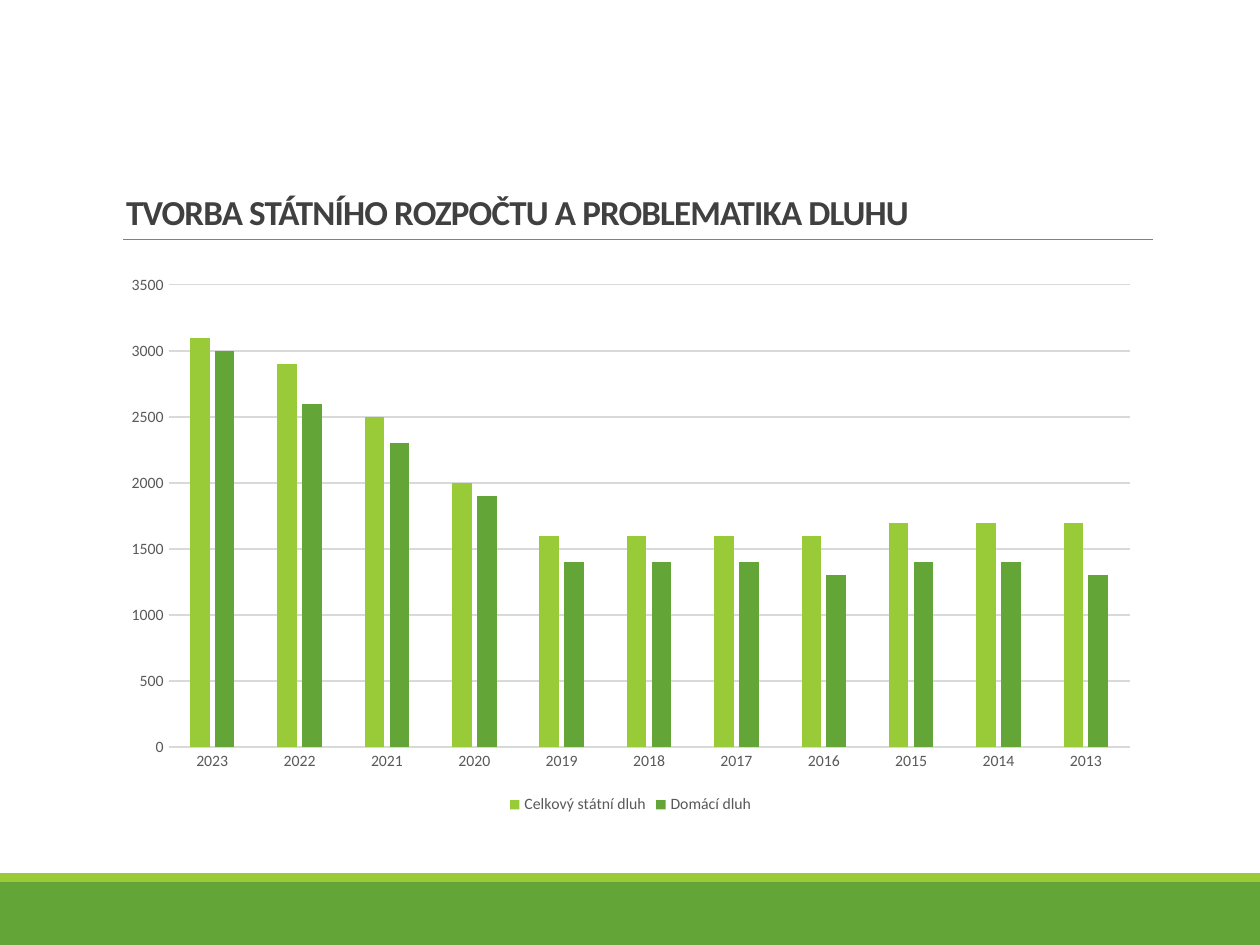
from pptx import Presentation
from pptx.chart.data import CategoryChartData
from pptx.dml.color import RGBColor
from pptx.enum.chart import XL_CHART_TYPE as ChartType, XL_LEGEND_POSITION as LegendPos, XL_TICK_MARK as Tick
from pptx.enum.shapes import MSO_CONNECTOR as Connector, MSO_SHAPE as Shape
from pptx.enum.text import MSO_ANCHOR as Anchor, PP_ALIGN as Align
from pptx.oxml.ns import qn
from pptx.util import Inches, Pt
from lxml import etree

COLORS = {
    "total": "99CB38",
    "domestic": "63A537",
    "heading": "404040",
    "rule": "808080",
    "label": "595959",
    "grid": "D9D9D9",
}
YEARS = [str(year) for year in range(2023, 2012, -1)]
DEBT = {
    "total": ("Celkový státní dluh",
              [3100, 2900, 2500, 2000, 1600, 1600, 1600, 1600, 1700, 1700, 1700]),
    "domestic": ("Domácí dluh",
                 [3000, 2600, 2300, 1900, 1400, 1400, 1400, 1300, 1400, 1400, 1300]),
}
LABEL_FONT = {"name": "Calibri", "size": Pt(9), "bold": False}
HEADING_FONT = {"name": "Calibri", "size": Pt(20), "bold": True}


def color(key):
    return RGBColor.from_string(COLORS[key])


def apply(target, values):
    for name, value in values.items():
        setattr(target, name, value)


def style_font(font, values, key):
    apply(font, values)
    font.color.rgb = color(key)


def style_line(line, key, width):
    line.color.rgb = color(key)
    line.width = Pt(width)


def add_footer(slide, left, top, width, height):
    stripe = Inches(0.07)
    bands = [("domestic", top + stripe, height - stripe), ("total", top, stripe)]
    for key, band_top, band_height in bands:
        band = slide.shapes.add_shape(Shape.RECTANGLE, left, band_top, width, band_height)
        band.shadow.inherit = False
        band.fill.solid()
        band.fill.fore_color.rgb = color(key)
        band.line.fill.background()


def add_heading(slide, left, top, width, height):
    heading = slide.shapes.title
    apply(heading, {"left": left, "top": top, "width": width, "height": height})
    apply(heading.text_frame, {"vertical_anchor": Anchor.BOTTOM, "word_wrap": True})
    paragraph = heading.text_frame.paragraphs[0]
    apply(paragraph, {"alignment": Align.LEFT, "line_spacing": 0.85})
    run = paragraph.add_run()
    run.text = "TVORBA STÁTNÍHO ROZPOČTU A PROBLEMATIKA DLUHU"
    style_font(run.font, HEADING_FONT, "heading")
    run.font._element.set("spc", "-50")

    bottom = top + height
    rule = slide.shapes.add_connector(
        Connector.STRAIGHT, left + Inches(0.08), bottom, left + width, bottom)
    style_line(rule.line, "rule", 0.5)
    etree.SubElement(rule._element.spPr, qn("a:effectLst"))


def add_debt_chart(slide, left, top, width, height):
    debt = CategoryChartData()
    debt.categories = YEARS
    for name, amounts in DEBT.values():
        debt.add_series(name, amounts)
    chart = slide.shapes.add_chart(
        ChartType.COLUMN_CLUSTERED, left, top, width, height, debt).chart
    apply(chart, {"has_title": False, "has_legend": True})
    apply(chart.font, {"name": "Calibri", "size": Pt(10)})
    apply(chart.legend, {"position": LegendPos.BOTTOM, "include_in_layout": False})
    style_font(chart.legend.font, LABEL_FONT, "label")

    columns = chart.plots[0]
    apply(columns, {"gap_width": 219, "overlap": -27, "vary_by_categories": False})
    for key, series in zip(DEBT, columns.series):
        series.format.fill.solid()
        series.format.fill.fore_color.rgb = color(key)

    years, amounts = chart.category_axis, chart.value_axis
    for axis in (years, amounts):
        apply(axis, {"major_tick_mark": Tick.NONE, "minor_tick_mark": Tick.NONE})
        style_font(axis.tick_labels.font, LABEL_FONT, "label")
    style_line(years.format.line, "grid", 0.75)
    apply(amounts, {"minimum_scale": 0, "maximum_scale": 3500, "major_unit": 500,
                    "has_major_gridlines": True})
    amounts.format.line.fill.background()
    style_line(amounts.major_gridlines.format.line, "grid", 0.75)


def main():
    deck = Presentation()
    apply(deck, {"slide_width": Inches(10), "slide_height": Inches(7.5)})
    slide = deck.slides.add_slide(deck.slide_layouts[5])
    add_footer(slide, Inches(0), Inches(6.93), Inches(10), Inches(0.57))
    add_heading(slide, Inches(0.9), Inches(0.31), Inches(8.25), Inches(1.59))
    add_debt_chart(slide, Inches(0.88), Inches(2.1), Inches(8.25), Inches(4.4))
    deck.save("out.pptx")


if __name__ == "__main__":
    main()
